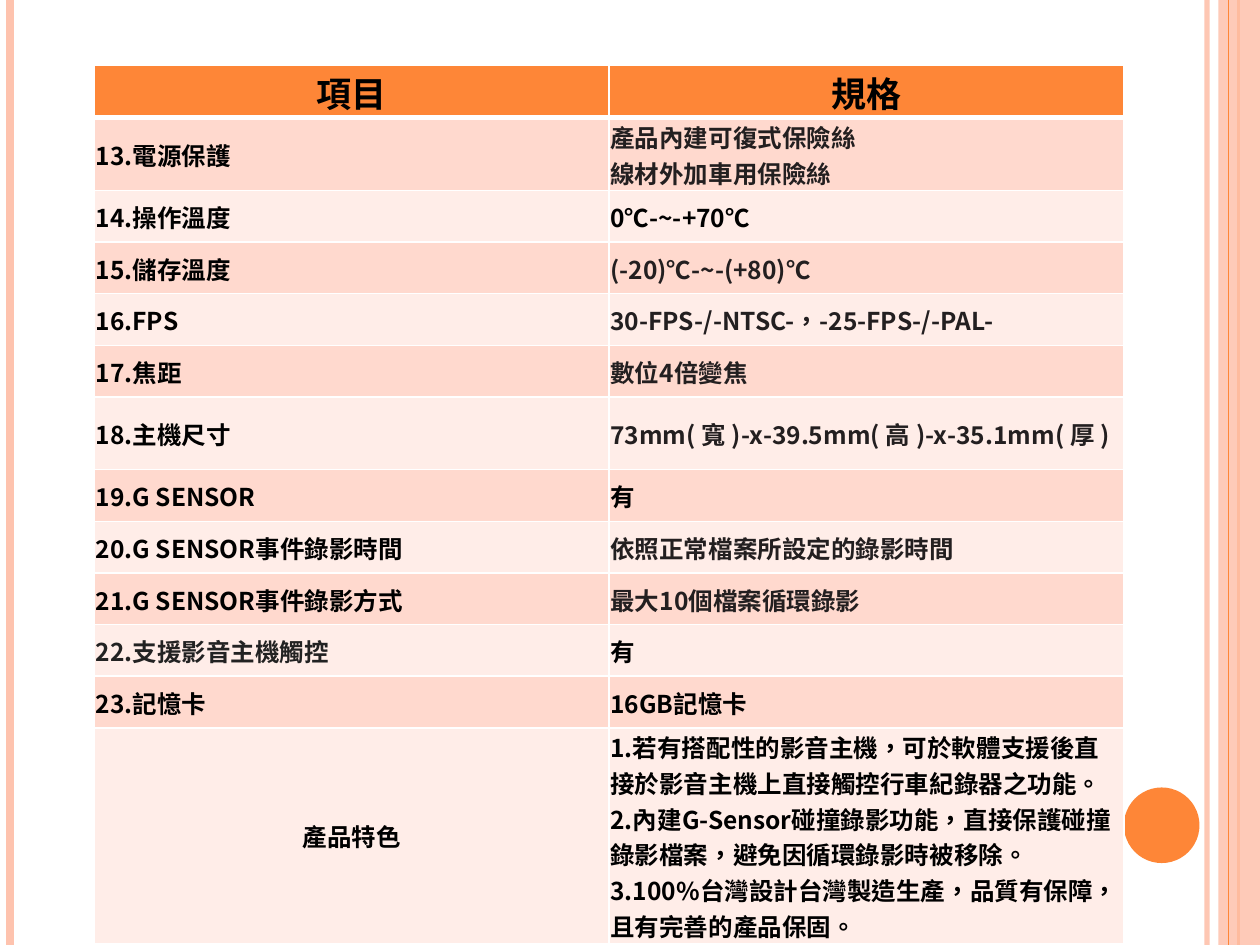
import dataclasses
import typing

import lxml.etree
import pptx
import pptx.dml.color
import pptx.enum.shapes
import pptx.enum.text
import pptx.oxml.ns
import pptx.util

Inches = pptx.util.Inches
Pt = pptx.util.Pt
qn = pptx.oxml.ns.qn


@dataclasses.dataclass(frozen=True)
class Theme:
    font: str = "Noto Sans CJK SC"
    header_size: float = 20
    body_size: float = 14
    accent: str = "FE8637"
    accent_light: str = "FEC3AE"
    band_dark: str = "FFD9CE"
    band_light: str = "FFEDE8"
    border: str = "FFFFFF"
    black: str = "000000"
    ink: str = "231F20"
    gray: str = "222222"


THEME = Theme()


@dataclasses.dataclass(frozen=True)
class Stripe:
    x: float
    color: str
    width: float
    opacity: int = 100


@dataclasses.dataclass(frozen=True)
class SpecRow:
    item: str
    value: str
    height: float = 0.41
    item_color: str = THEME.black
    value_color: str = THEME.black
    item_centered: bool = False
    value_anchor: str = "ctr"


LEFT_STRIPES = [
    Stripe(9.58, THEME.accent_light, 3, 93),
    Stripe(0.08, THEME.accent_light, 4.5),
    Stripe(9.83, THEME.accent, 1.5),
]
EDGE_STRIPE = Stripe(9.75, THEME.accent, 0.75)

SPEC_ROWS = [
    SpecRow("13.電源保護", "產品內建可復式保險絲\n線材外加車用保險絲", 0.48, value_color=THEME.ink),
    SpecRow("14.操作溫度", "0℃-~-+70℃"),
    SpecRow("15.儲存溫度", "(-20)℃-~-(+80)℃", value_color=THEME.ink),
    SpecRow("16.FPS", "30-FPS-/-NTSC-，-25-FPS-/-PAL-", value_color=THEME.ink),
    SpecRow("17.焦距", "數位4倍變焦", value_color=THEME.ink),
    SpecRow("18.主機尺寸", "73mm( 寬 )-x-39.5mm( 高 )-x-35.1mm( 厚 )", value_color=THEME.ink),
    SpecRow("19.G SENSOR", "有"),
    SpecRow("20.G SENSOR事件錄影時間", "依照正常檔案所設定的錄影時間", value_color=THEME.ink),
    SpecRow("21.G SENSOR事件錄影方式", "最大10個檔案循環錄影", value_color=THEME.ink),
    SpecRow("22.支援影音主機觸控", "有", item_color=THEME.gray),
    SpecRow("23.記憶卡", "16GB記憶卡"),
    SpecRow(
        "產品特色",
        "1.若有搭配性的影音主機，可於軟體支援後直接於影音主機上直接觸控行車紀錄器之功能。\n"
        "2.內建G-Sensor碰撞錄影功能，直接保護碰撞錄影檔案，避免因循環錄影時被移除。\n"
        "3.100%台灣設計台灣製造生產，品質有保障，且有完善的產品保固。",
        1.43,
        item_centered=True,
        value_anchor="t",
    ),
]


def rgb(color: str) -> pptx.dml.color.RGBColor:
    return pptx.dml.color.RGBColor.from_string(color)


def set_opacity(element: typing.Any, percent: int) -> None:
    color = next(element.iter(qn("a:srgbClr")))
    lxml.etree.SubElement(color, qn("a:alpha"), val=str(percent * 1000))


def write_text(
    frame: typing.Any, text: str, *, size: float, color: str, centered: bool = False
) -> None:
    para = frame.paragraphs[0]
    align = pptx.enum.text.PP_ALIGN
    para.alignment = align.CENTER if centered else align.LEFT
    for index, line in enumerate(text.split("\n")):
        if index:
            para.add_line_break()
        span = para.add_run()
        span.text = line
        span.font.name = THEME.font
        span.font.size = Pt(size)
        span.font.bold = True
        span.font.color.rgb = rgb(color)
        properties = span.font._element
        properties.set("lang", "zh-TW")
        latin = properties.find(qn("a:latin"))
        latin.addnext(latin.makeelement(qn("a:ea"), {"typeface": THEME.font}))


def draw_stripe(page: typing.Any, stripe: Stripe) -> None:
    line = page.shapes.add_connector(
        pptx.enum.shapes.MSO_CONNECTOR.STRAIGHT,
        Inches(stripe.x), Inches(0), Inches(stripe.x), Inches(7.5),
    )
    line.line.color.rgb = rgb(stripe.color)
    line.line.width = Pt(stripe.width)
    properties = line._element.spPr
    if stripe.opacity < 100:
        set_opacity(properties, stripe.opacity)
    lxml.etree.SubElement(properties, qn("a:effectLst"))


def draw_shape(
    page: typing.Any, kind: typing.Any, left: float, top: float,
    width: float, height: float, *, color: str, opacity: int = 100,
) -> None:
    shape = page.shapes.add_shape(
        kind, Inches(left), Inches(top), Inches(width), Inches(height)
    )
    shape.shadow.inherit = False
    shape.fill.solid()
    shape.fill.fore_color.rgb = rgb(color)
    shape.line.fill.background()
    if opacity < 100:
        set_opacity(shape._element.spPr, opacity)


def style_cell(
    cell: typing.Any, *, fill: str, anchor: str = "ctr", top: float = 1, bottom: float = 1
) -> None:
    cell.margin_left = cell.margin_right = cell.margin_top = Inches(0.01)
    cell.margin_bottom = Inches(0)
    properties = cell._tc.get_or_add_tcPr()
    properties.set("anchor", anchor)
    for side, width in (("L", 1), ("R", 1), ("T", top), ("B", bottom)):
        line = lxml.etree.SubElement(properties, qn(f"a:ln{side}"), w=str(Pt(width)))
        solid = lxml.etree.SubElement(line, qn("a:solidFill"))
        lxml.etree.SubElement(solid, qn("a:srgbClr"), val=THEME.border)
    cell.fill.solid()
    cell.fill.fore_color.rgb = rgb(fill)


def draw_spec_table(page: typing.Any, rows: list[SpecRow]) -> None:
    table = page.shapes.add_table(
        len(rows) + 1, 2, Inches(0.75), Inches(0.52), Inches(8.17), Inches(6.43)
    ).table
    table.rows[0].height = Inches(0.41)
    for column, title in enumerate(("項目", "規格")):
        cell = table.cell(0, column)
        style_cell(cell, fill=THEME.accent, bottom=3)
        write_text(cell.text_frame, title, size=THEME.header_size,
                   color=THEME.black, centered=True)
    for number, row in enumerate(rows, start=1):
        table.rows[number].height = Inches(row.height)
        band = THEME.band_dark if number % 2 else THEME.band_light
        top = 3 if number == 1 else 1
        item, value = table.cell(number, 0), table.cell(number, 1)
        style_cell(item, fill=band, top=top)
        style_cell(value, fill=band, top=top, anchor=row.value_anchor)
        write_text(item.text_frame, row.item, size=THEME.body_size,
                   color=row.item_color, centered=row.item_centered)
        write_text(value.text_frame, row.value, size=THEME.body_size, color=row.value_color)


def main() -> None:
    deck = pptx.Presentation()
    deck.slide_width, deck.slide_height = Inches(10), Inches(7.5)
    page = deck.slides.add_slide(deck.slide_layouts[6])
    kinds = pptx.enum.shapes.MSO_SHAPE
    for stripe in LEFT_STRIPES:
        draw_stripe(page, stripe)
    draw_shape(page, kinds.RECTANGLE, 9.67, 0, 0.33, 7.5,
               color=THEME.accent_light, opacity=87)
    draw_stripe(page, EDGE_STRIPE)
    draw_shape(page, kinds.OVAL, 8.92, 6.25, 0.6, 0.6, color=THEME.accent)
    draw_spec_table(page, SPEC_ROWS)
    deck.save("out.pptx")


if __name__ == "__main__":
    main()
